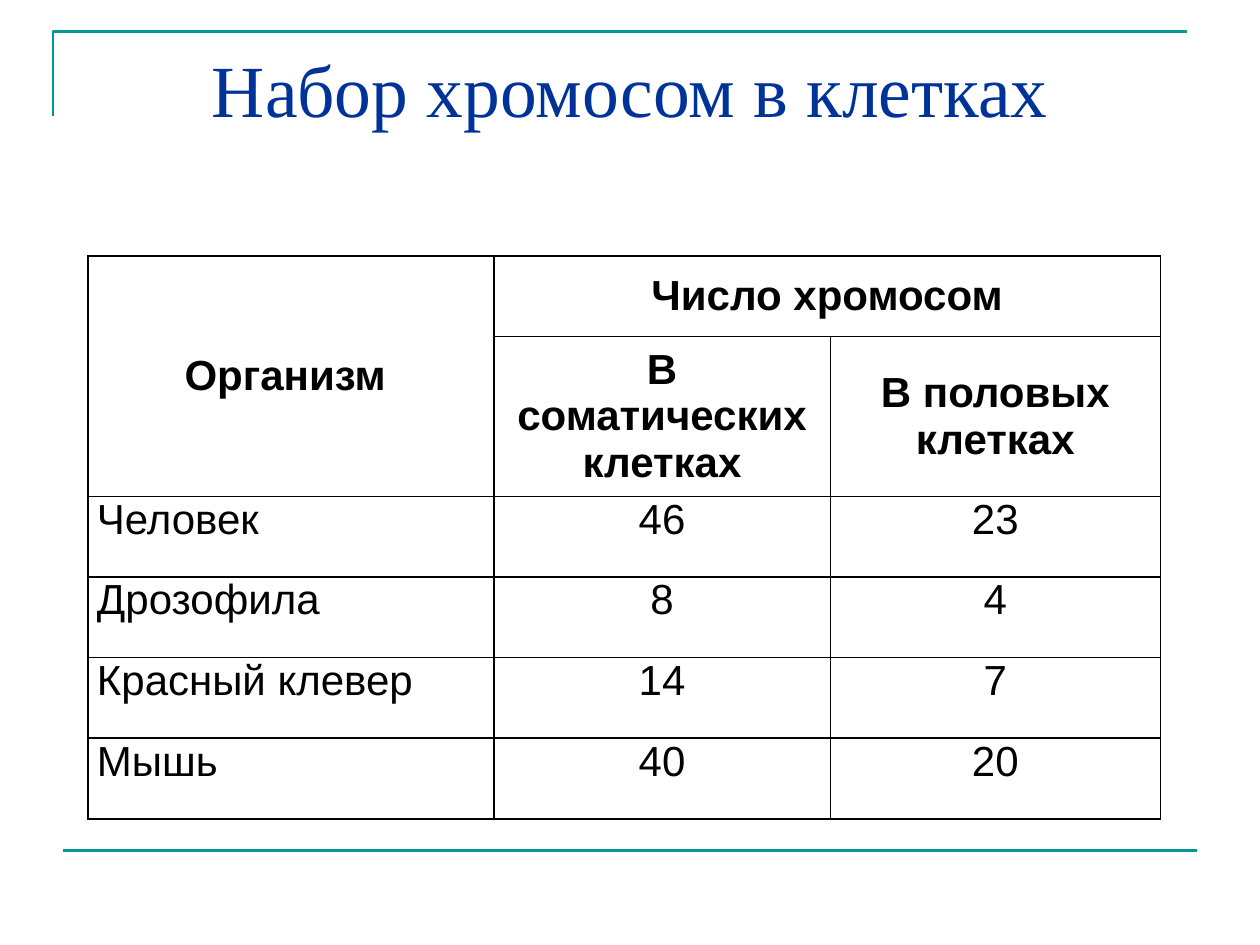
from lxml import etree
from pptx import Presentation
from pptx.dml.color import RGBColor
from pptx.enum import shapes, text
from pptx.oxml import ns
from pptx.util import Inches, Pt

TEAL, NAVY, BLACK = "009999", "003399", "000000"
COLUMNS = [3.22, 2.67, 2.62]
ROWS = [0.64, 1.27, 0.64, 0.64, 0.64, 0.64]
HEADINGS = [
    ["Организм ", "Число хромосом", ""],
    ["", "В соматических клетках", "В половых клетках"],
]
ORGANISMS = [
    ["Человек", "46", "23"],
    ["Дрозофила", "8", "4"],
    ["Красный клевер", "14", "7"],
    ["Мышь", "40", "20"],
]
MERGES = [((0, 0), (1, 0)), ((0, 1), (0, 2))]


def colour(value):
    return RGBColor.from_string(value)


class SlideBuilder:
    """Holds the current page and the look of its elements."""

    def __init__(self, page):
        self.page = page
        self.rule_width = Pt(1.5)
        self.border_width = Pt(1)
        self.cell_margin = Inches(0.07)

    def style_line(self, shape):
        shape.line.color.rgb = colour(TEAL)
        shape.line.width = self.rule_width

    def corner(self, points):
        """Draw an open outline through the points."""
        start, *others = [(Inches(x), Inches(y)) for x, y in points]
        builder = self.page.shapes.build_freeform(*start)
        builder.add_line_segments(others, close=False)
        shape = builder.convert_to_shape()
        shape.shadow.inherit = False
        shape.fill.background()
        self.style_line(shape)

    def rule(self, left, right, y):
        line = self.page.shapes.add_connector(
            shapes.MSO_CONNECTOR.STRAIGHT,
            Inches(left), Inches(y), Inches(right), Inches(y))
        etree.SubElement(line._element.spPr, ns.qn("a:effectLst"))
        self.style_line(line)

    def set_text(self, para, words, font, size, ink, bold=False, centred=True):
        para.text = words
        para.alignment = text.PP_ALIGN.CENTER if centred else text.PP_ALIGN.LEFT
        para.font.name = font
        para.font.size = Pt(size)
        para.font.bold = bold
        para.font.color.rgb = colour(ink)

    def title(self, words, left, top, width, height):
        box = self.page.shapes.add_textbox(
            Inches(left), Inches(top), Inches(width), Inches(height))
        box.text_frame.word_wrap = True
        self.set_text(box.text_frame.paragraphs[0], words, "Times New Roman", 42, NAVY)

    def border(self, cell):
        properties = cell._tc.get_or_add_tcPr()
        for position, side in enumerate(("lnL", "lnR", "lnT", "lnB")):
            line = etree.Element(ns.qn(f"a:{side}"), w=str(self.border_width))
            fill = etree.SubElement(line, ns.qn("a:solidFill"))
            etree.SubElement(fill, ns.qn("a:srgbClr"), val=BLACK)
            properties.insert(position, line)

    def table(self, left, top, headings, body):
        rows = headings + body
        table = self.page.shapes.add_table(
            len(rows), len(COLUMNS), Inches(left), Inches(top),
            Inches(sum(COLUMNS)), Inches(sum(ROWS))).table
        for column, width in zip(table.columns, COLUMNS):
            column.width = Inches(width)
        for row, height in zip(table.rows, ROWS):
            row.height = Inches(height)
        for r, values in enumerate(rows):
            for c, words in enumerate(values):
                cell = table.cell(r, c)
                heading = r < len(headings)
                cell.fill.background()
                cell.margin_left = cell.margin_right = self.cell_margin
                cell.margin_top = cell.margin_bottom = 0
                cell.vertical_anchor = (
                    text.MSO_ANCHOR.MIDDLE if heading else text.MSO_ANCHOR.TOP)
                self.set_text(cell.text_frame.paragraphs[0], words, "Arial", 24, BLACK,
                              bold=heading, centred=heading or c > 0)
                self.border(cell)
        for first, last in MERGES:
            table.cell(*first).merge(table.cell(*last))


def main():
    deck = Presentation()
    deck.slide_width, deck.slide_height = Inches(10), Inches(7.5)
    builder = SlideBuilder(deck.slides.add_slide(deck.slide_layouts[6]))
    builder.corner([(0.42, 0.92), (0.42, 0.25), (9.42, 0.25)])
    builder.rule(0.5, 9.5, 6.75)
    builder.title("Набор хромосом в клетках", 0.5, 0.3, 9, 1.25)
    builder.table(0.7, 2.03, HEADINGS, ORGANISMS)
    deck.save("out.pptx")


if __name__ == "__main__":
    main()
